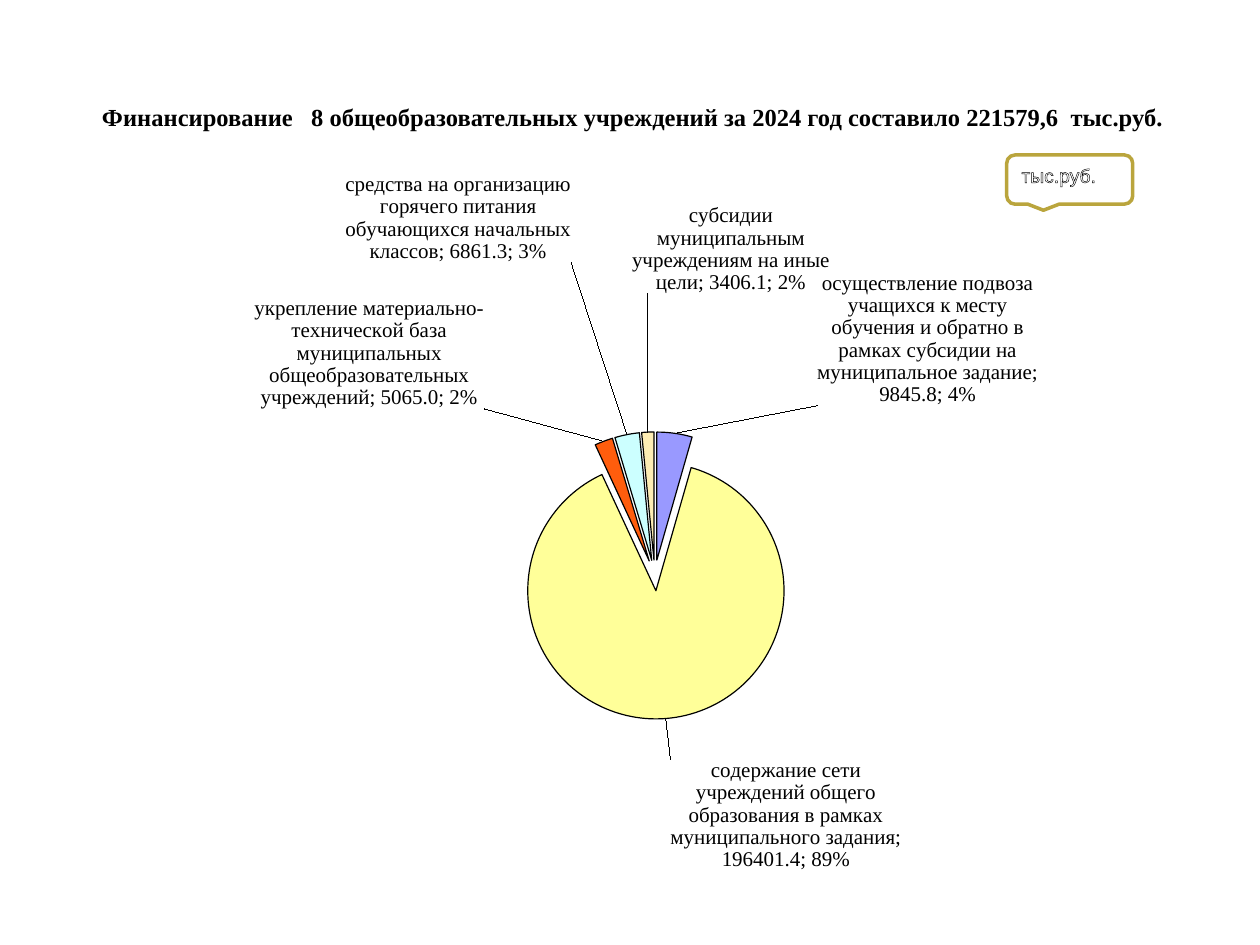
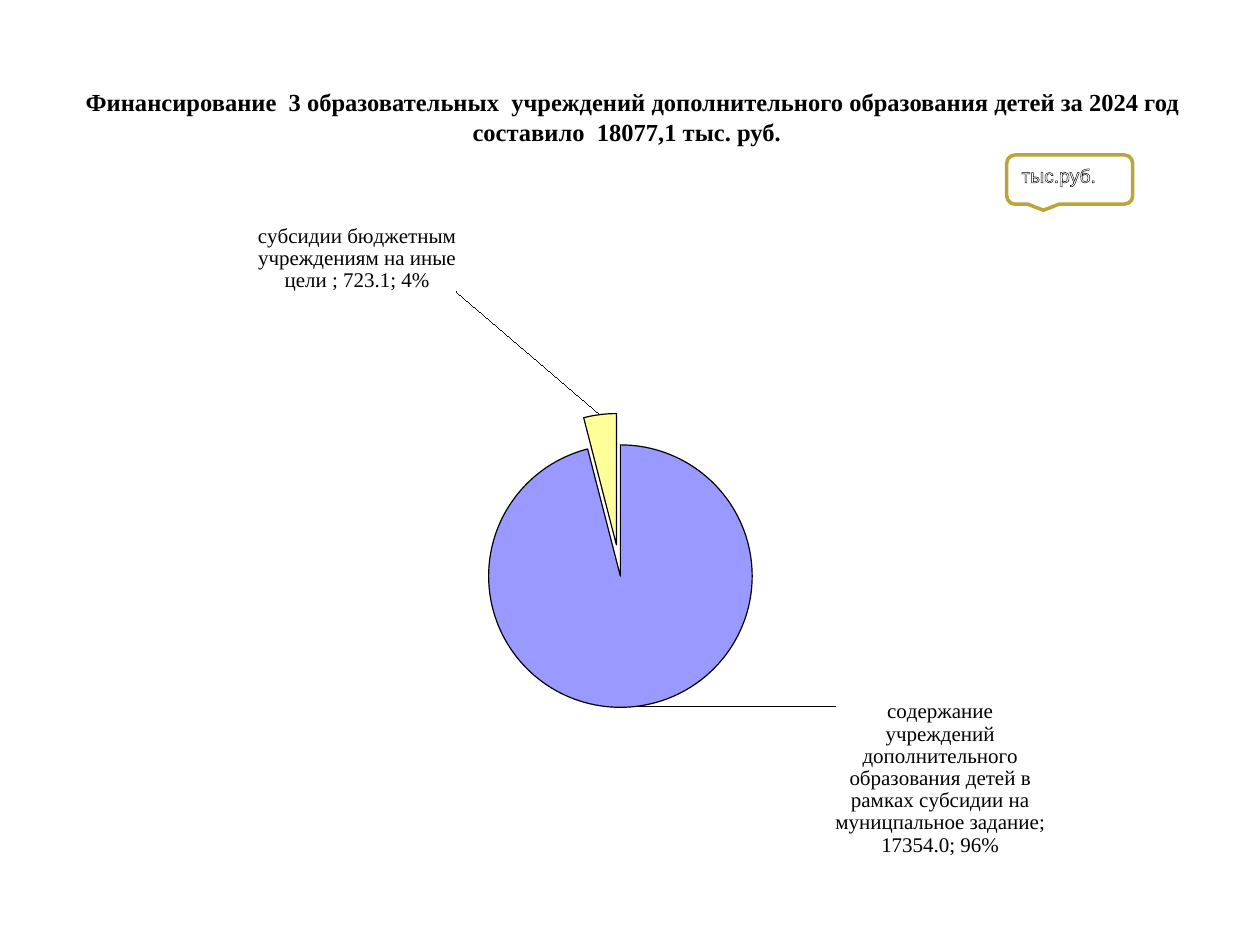
from lxml import etree
from pptx import Presentation
from pptx.chart.data import CategoryChartData
from pptx.dml.color import RGBColor
from pptx.enum.chart import XL_CHART_TYPE
from pptx.enum.shapes import MSO_SHAPE
from pptx.enum.text import MSO_ANCHOR, PP_ALIGN
from pptx.oxml import parse_xml
from pptx.oxml.ns import nsdecls, qn
from pptx.util import Inches, Pt

PIE = XL_CHART_TYPE.PIE
CALLOUT = MSO_SHAPE.ROUNDED_RECTANGULAR_CALLOUT
TOP, MIDDLE = MSO_ANCHOR.TOP, MSO_ANCHOR.MIDDLE
LEFT, CENTER = PP_ALIGN.LEFT, PP_ALIGN.CENTER

COLORS = {"black": "000000", "white": "FFFFFF", "gold": "BAA53D", "violet": "9999FF",
          "yellow": "FFFF99", "orange": "FF5D0D", "cyan": "CCFFFF", "cream": "FDECB3"}
SLICE_COLORS = ["violet", "yellow", "orange", "cyan", "cream"]
SERIF, SANS = "Times New Roman", "Arial"
TITLE_AREA = (0.5, 0.3, 9, 1.25)
UNIT_AREA = (7.99, 1.23, 1, 0.39)
UNIT = "тыс.руб."
EXPLOSION = 12

# Each slice: category, value, label shift as a share of chart width and height.
SLIDES = [
    {
        "title": " Финансирование   8 общеобразовательных учреждений за 2024 год"
                 " составило 221579,6  тыс.руб.",
        "area": (0.67, 1.15, 9.21, 5.98),
        "plot": {"x": 0.169, "y": 0.381, "w": 0.645, "h": 0.381},
        "slices": [
            ("осуществление подвоза учащихся к месту обучения и обратно в рамках"
             " субсидии на муниципальное задание", 9845.8, (0.122, -0.027)),
            ("содержание сети учреждений общего образования в рамках"
             " муниципального задания", 196401.4, (0.103, 0.044)),
            ("укрепление материально-технической база муниципальных"
             " общеобразовательных учреждений", 5065.0, (-0.101, -0.034)),
            ("средства на организацию горячего питания обучающихся начальных классов",
             6861.3, (-0.047, -0.219)),
            ("субсидии муниципальным учреждениям на иные цели", 3406.1, (0.072, -0.174)),
        ],
    },
    {
        "title": " Финансирование  3 образовательных  учреждений дополнительного образования"
                 " детей за 2024 год составило  18077,1 тыс. руб. ",
        "area": (0.51, 1.07, 8.66, 5.83),
        "plot": {"x": 0.169, "y": 0.381, "w": 0.678, "h": 0.402},
        "slices": [
            ("содержание учреждений дополнительного образования детей в рамках"
             " субсидии на муницпальное задание", 17354.0, (0.181, -0.018)),
            ("субсидии бюджетным учреждениям на иные цели ", 723.1, (-0.131, -0.158)),
        ],
    },
]

LABEL_FORMAT = f"""<c:numFmt formatCode="0%" sourceLinked="0"/>
<c:spPr><a:noFill/><a:ln><a:noFill/></a:ln></c:spPr>
<c:txPr><a:bodyPr wrap="square"/><a:p><a:pPr><a:defRPr sz="1200" b="0">
<a:solidFill><a:srgbClr val="{COLORS['black']}"/></a:solidFill>
<a:latin typeface="{SERIF}"/><a:cs typeface="{SERIF}"/></a:defRPr></a:pPr></a:p></c:txPr>
<c:dLblPos val="bestFit"/><c:showLegendKey val="0"/><c:showVal val="1"/>
<c:showCatName val="1"/><c:showSerName val="0"/><c:showPercent val="1"/>
<c:showBubbleSize val="0"/><c:separator>; </c:separator>"""


def color(name):
    return RGBColor.from_string(COLORS[name])


def inches(area):
    return [Inches(length) for length in area]


def write(shape, text, size, font, ink="black", bold=False, align=LEFT, anchor=TOP):
    frame = shape.text_frame
    frame.word_wrap = True
    frame.vertical_anchor = anchor
    para = frame.paragraphs[0]
    para.alignment = align
    span = para.add_run()
    span.text = text
    span.font.size = Pt(size)
    span.font.name = font
    span.font.bold = bold
    span.font.color.rgb = color(ink)
    return span


def add_unit_callout(page):
    callout = page.shapes.add_shape(CALLOUT, *inches(UNIT_AREA))
    callout.shadow.inherit = False
    callout.fill.solid()
    callout.fill.fore_color.rgb = color("white")
    callout.line.color.rgb = color("gold")
    callout.line.width = Pt(2)
    span = write(callout, UNIT, 11, SANS, ink="white")
    outline = parse_xml(
        f'<a:ln {nsdecls("a")} w="{Pt(0.75)}"><a:solidFill>'
        f'<a:srgbClr val="{COLORS["black"]}"/></a:solidFill></a:ln>')
    span.font._element.insert(0, outline)


def layout_xml(**parts):
    modes = '<c:layoutTarget val="inner"/>' if "w" in parts else ""
    if "w" in parts:
        modes += '<c:xMode val="edge"/><c:yMode val="edge"/>'
    values = "".join(f'<c:{key} val="{value}"/>' for key, value in parts.items())
    return (f'<c:layout {nsdecls("c")}><c:manualLayout>{modes}{values}'
            '</c:manualLayout></c:layout>')


def add_labels(series, shifts):
    labels = "".join(
        f'<c:dLbl><c:idx val="{index}"/>{layout_xml(x=x, y=y)}{LABEL_FORMAT}</c:dLbl>'
        for index, (x, y) in enumerate(shifts))
    series.find(qn("c:cat")).addprevious(parse_xml(
        f'<c:dLbls {nsdecls("c", "a")}>{labels}{LABEL_FORMAT}'
        '<c:showLeaderLines val="1"/></c:dLbls>'))


def add_pie(page, area, plot, slices):
    names, values, shifts = zip(*slices)
    data = CategoryChartData(number_format="0.0")
    data.categories = names
    data.add_series("Series 1", values)
    chart = page.shapes.add_chart(PIE, *inches(area), data).chart
    chart.has_title = False
    chart.has_legend = False
    chart.font.size = Pt(8)
    chart.font.name = SANS
    chart.font.color.rgb = color("black")
    chart.plots[0].vary_by_categories = True

    series = chart.plots[0].series[0]
    series.format.line.color.rgb = color("black")
    series.format.line.width = Pt(0.67)
    for index in range(len(slices)):
        style = series.points[index].format
        style.fill.solid()
        style.fill.fore_color.rgb = color(SLICE_COLORS[index])
        style.line.color.rgb = color("black")
        style.line.width = Pt(0.67)

    element = series._element
    explosion = etree.Element(qn("c:explosion"), val=str(EXPLOSION))
    element.find(qn("c:spPr")).addnext(explosion)
    add_labels(element, shifts)

    plot_area = chart._chartSpace.find(qn("c:chart")).find(qn("c:plotArea"))
    for layout in plot_area.findall(qn("c:layout")):
        plot_area.remove(layout)
    plot_area.insert(0, parse_xml(layout_xml(**plot)))


def main():
    deck = Presentation()
    deck.slide_width, deck.slide_height = Inches(10), Inches(7.5)
    for content in SLIDES:
        page = deck.slides.add_slide(deck.slide_layouts[6])
        box = page.shapes.add_textbox(*inches(TITLE_AREA))
        write(box, content["title"], 14, SERIF, bold=True, align=CENTER, anchor=MIDDLE)
        add_unit_callout(page)
        add_pie(page, content["area"], content["plot"], content["slices"])
    deck.save("out.pptx")


if __name__ == "__main__":
    main()
